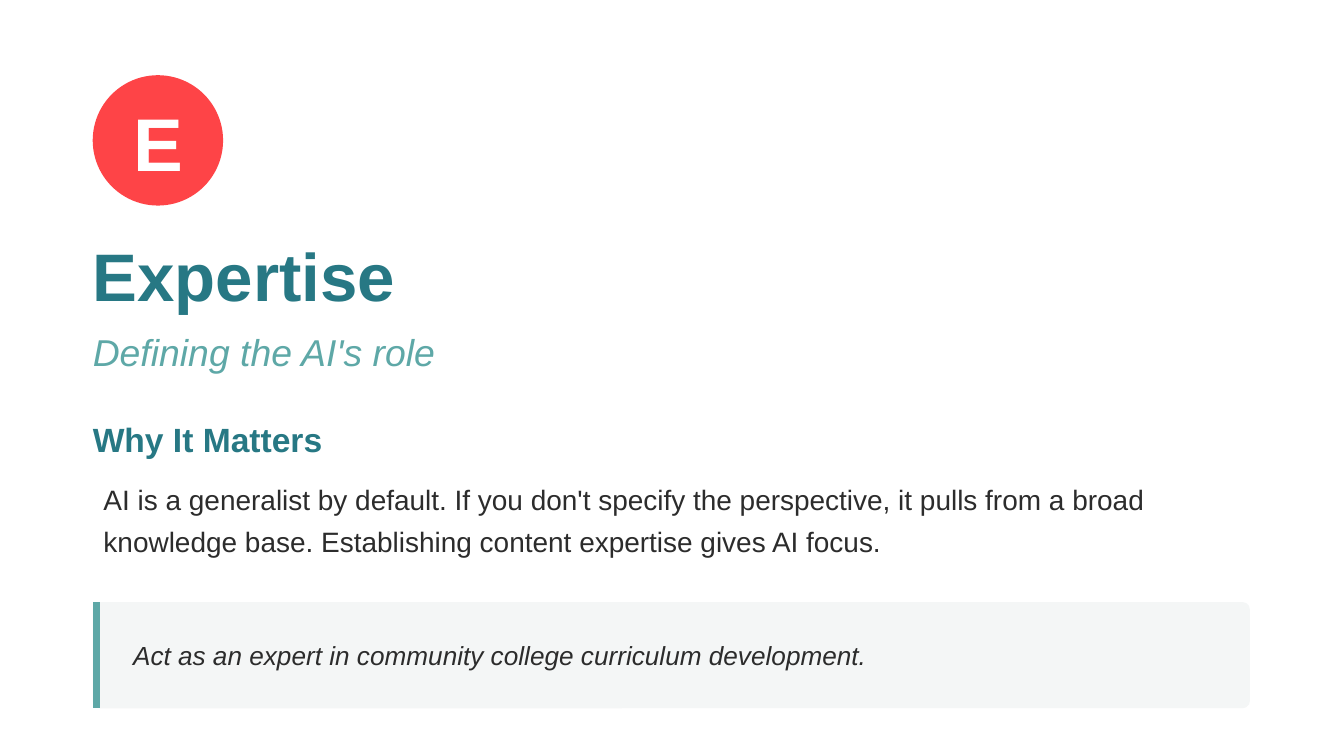
from dataclasses import dataclass

from lxml import etree
from pptx import Presentation
from pptx import util as u
from pptx.dml import color
from pptx.enum import shapes, text
from pptx.oxml import ns


@dataclass(frozen=True)
class Theme:
    """Colours, type sizes and font of the slide."""
    font: str = "Arial"
    white: str = "FFFFFF"
    red: str = "FE4447"
    teal: str = "277884"
    soft_teal: str = "5EA8A7"
    ink: str = "2C2C2C"
    panel: str = "F4F6F6"
    letter: int = 40
    title: int = 36
    subtitle: int = 20
    heading: int = 18
    body: int = 15
    quote: int = 14


THEME = Theme()
LEFT = 0.69
TEXT_WIDTH = 8.78


def rgb(value):
    """Turn a hex string into a colour."""
    return color.RGBColor.from_string(value)


def place(item, left, top, width, height):
    """Set the position and size of a shape in inches."""
    item.left, item.top = u.Inches(left), u.Inches(top)
    item.width, item.height = u.Inches(width), u.Inches(height)


def write(item, words, size, tint, bold=False, italic=False,
          align=text.PP_ALIGN.LEFT, anchor=text.MSO_ANCHOR.TOP):
    """Fill a shape with one formatted paragraph and return it."""
    frame = item.text_frame
    frame.text = words
    frame.word_wrap = True
    frame.auto_size = text.MSO_AUTO_SIZE.NONE
    frame.vertical_anchor = anchor
    frame.margin_left = frame.margin_right = 0
    frame.margin_top = frame.margin_bottom = 0
    para = frame.paragraphs[0]
    para.alignment = align
    font = para.runs[0].font
    font.name, font.size = THEME.font, u.Pt(size)
    font.bold, font.italic = bold, italic
    font.color.rgb = rgb(tint)
    return para


def add_text(page, area, words, size, tint, **style):
    """Add a text box and return its paragraph."""
    box = page.shapes.add_textbox(*map(u.Inches, area))
    return write(box, words, size, tint, **style)


def add_rounded(page, area, tint, rounding):
    """Add a filled rounded rectangle without outline or shadow."""
    shape = page.shapes.add_shape(
        shapes.MSO_SHAPE.ROUNDED_RECTANGLE, *map(u.Inches, area))
    shape.adjustments[0] = rounding
    shape.shadow.inherit = False
    shape.fill.solid()
    shape.fill.fore_color.rgb = rgb(tint)
    shape.line.fill.background()


def add_bar(page, x, top, bottom, tint, weight):
    """Add a vertical accent line without shadow."""
    bar = page.shapes.add_connector(
        shapes.MSO_CONNECTOR.STRAIGHT,
        u.Inches(x), u.Inches(top), u.Inches(x), u.Inches(bottom))
    bar.line.color.rgb = rgb(tint)
    bar.line.width = u.Pt(weight)
    etree.SubElement(bar._element.spPr, ns.qn("a:effectLst"))


def add_badge(page):
    """Add the round badge with its letter."""
    add_rounded(page, (LEFT, 0.56, 0.97, 0.97), THEME.red, 0.5)
    add_text(page, (0.99, 0.72, 0.38, 0.64), "E", THEME.letter, THEME.white,
             bold=True, align=text.PP_ALIGN.CENTER)


def add_title(page):
    """Move and format the title placeholder."""
    title = page.shapes.title
    place(title, LEFT, 1.74, TEXT_WIDTH, 0.57)
    para = write(title, "Expertise", THEME.title, THEME.teal, bold=True)
    para.space_before, para.space_after = u.Pt(0), u.Pt(10)
    para.line_spacing = 1.0


def add_quote(page, words):
    """Add the quotation panel with its accent bar."""
    top, height = 4.48, 0.79
    add_rounded(page, (LEFT, top, 8.61, height), THEME.panel, 0.07)
    add_bar(page, 0.72, top, top + height, THEME.soft_teal, 3.75)
    add_text(page, (0.99, top, 8.22, height), words, THEME.quote, THEME.ink,
             italic=True, anchor=text.MSO_ANCHOR.MIDDLE)


def main():
    """Build the slide and save the deck."""
    deck = Presentation()
    deck.slide_width = u.Inches(10)
    deck.slide_height = u.Inches(10 * 9 / 16)
    page = deck.slides.add_slide(deck.slide_layouts[5])
    add_badge(page)
    add_title(page)
    add_text(page, (LEFT, 2.45, TEXT_WIDTH, 0.32), "Defining the AI's role",
             THEME.subtitle, THEME.soft_teal, italic=True)
    heading = add_text(page, (LEFT, 3.12, TEXT_WIDTH, 0.29), "Why It Matters",
                       THEME.heading, THEME.teal, bold=True)
    heading.space_after = u.Pt(12)
    reason = add_text(
        page, (0.77, 3.53, TEXT_WIDTH, 0.62),
        "AI is a generalist by default. If you don't specify the perspective, "
        "it pulls from a broad knowledge base. Establishing content expertise "
        "gives AI focus.", THEME.body, THEME.ink)
    reason.line_spacing, reason.space_after = u.Pt(22.5), u.Pt(20)
    add_quote(page, "Act as an expert in community college curriculum development.")
    deck.save("out.pptx")


if __name__ == "__main__":
    main()
